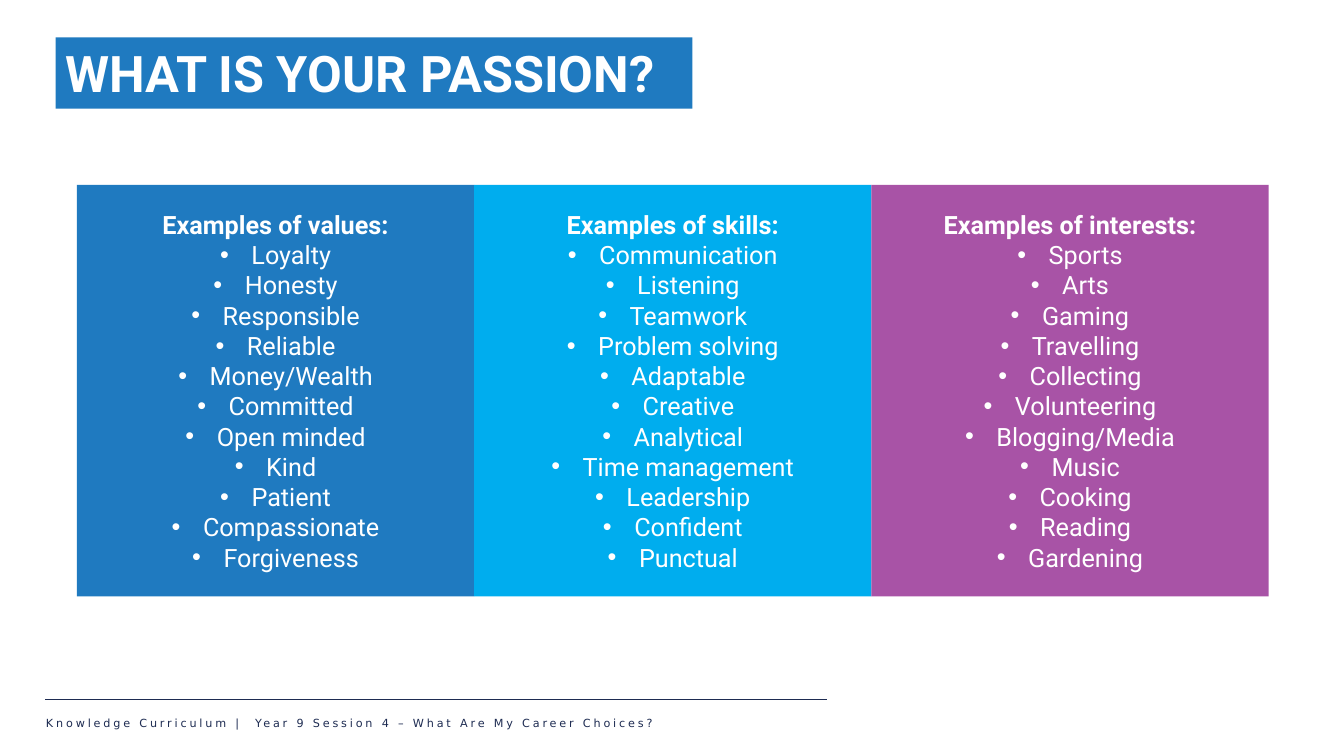
from dataclasses import dataclass

import pptx
import pptx.dml.color
import pptx.enum.shapes
import pptx.enum.text
import pptx.oxml.ns
import pptx.shapes.autoshape
import pptx.slide
import pptx.text.text
import pptx.util
from lxml import etree
from pptx.util import Cm

COLORS = {
    "blue": "1F7AC0",
    "sky": "00ADEE",
    "purple": "A853A6",
    "navy": "1E2C52",
    "white": "FFFFFF",
}
PANEL_LEFT, PANEL_TOP = 1.94, 4.66
PANEL_WIDTH, PANEL_HEIGHT = 10.01, 10.37
BULLET_INDENT = 0.79


@dataclass
class Panel:
    heading: str
    items: list[str]
    color: str


PANELS = [
    Panel("Examples of values:",
          ["Loyalty", "Honesty", "Responsible", "Reliable", "Money/Wealth", "Committed",
           "Open minded", "Kind", "Patient", "Compassionate", "Forgiveness"], "blue"),
    Panel("Examples of skills:",
          ["Communication", "Listening", "Teamwork", "Problem solving", "Adaptable", "Creative",
           "Analytical", "Time management", "Leadership", "Confident", "Punctual"], "sky"),
    Panel("Examples of interests:",
          ["Sports", "Arts", "Gaming", "Travelling", "Collecting", "Volunteering",
           "Blogging/Media", "Music", "Cooking", "Reading", "Gardening"], "purple"),
]


def rgb(color: str) -> pptx.dml.color.RGBColor:
    return pptx.dml.color.RGBColor.from_string(COLORS[color])


def add_run(paragraph: pptx.text.text._Paragraph, text: str, size: float, color: str = "white",
            font: str = "Roboto", bold: bool = False) -> pptx.text.text._Run:
    run = paragraph.add_run()
    run.text = text
    run.font.name = font
    run.font.size = pptx.util.Pt(size)
    run.font.bold = bold
    run.font.color.rgb = rgb(color)
    return run


def add_rectangle(slide: pptx.slide.Slide, left: float, top: float, width: float, height: float,
                  color: str) -> pptx.shapes.autoshape.Shape:
    shape = slide.shapes.add_shape(pptx.enum.shapes.MSO_SHAPE.RECTANGLE,
                                   Cm(left), Cm(top), Cm(width), Cm(height))
    shape.shadow.inherit = False
    shape.fill.solid()
    shape.fill.fore_color.rgb = rgb(color)
    shape.line.fill.background()
    shape.text_frame.word_wrap = True
    return shape


def add_bullet(paragraph: pptx.text.text._Paragraph) -> None:
    properties = paragraph._p.get_or_add_pPr()
    properties.set("marL", str(Cm(BULLET_INDENT)))
    properties.set("indent", str(-Cm(BULLET_INDENT)))
    font = etree.SubElement(properties, pptx.oxml.ns.qn("a:buFont"))
    font.set("typeface", "Arial")
    bullet = etree.SubElement(properties, pptx.oxml.ns.qn("a:buChar"))
    bullet.set("char", "•")


def add_panel(slide: pptx.slide.Slide, panel: Panel, column: int) -> None:
    shape = add_rectangle(slide, PANEL_LEFT + column * PANEL_WIDTH, PANEL_TOP,
                          PANEL_WIDTH, PANEL_HEIGHT, panel.color)
    frame = shape.text_frame
    frame.vertical_anchor = pptx.enum.text.MSO_ANCHOR.MIDDLE
    heading = frame.paragraphs[0]
    heading.alignment = pptx.enum.text.PP_ALIGN.CENTER
    add_run(heading, panel.heading, 18, bold=True)
    for item in panel.items:
        paragraph = frame.add_paragraph()
        paragraph.alignment = pptx.enum.text.PP_ALIGN.CENTER
        add_bullet(paragraph)
        add_run(paragraph, item, 18)


def add_footer(slide: pptx.slide.Slide) -> None:
    rule = slide.shapes.add_connector(pptx.enum.shapes.MSO_CONNECTOR.STRAIGHT,
                                      Cm(1.14), Cm(17.63), Cm(20.85), Cm(17.63))
    rule.line.color.rgb = rgb("navy")
    rule.line.width = pptx.util.Pt(0.5)
    etree.SubElement(rule._element.spPr, pptx.oxml.ns.qn("a:effectLst"))

    box = slide.shapes.add_textbox(Cm(0.91), Cm(17.93), Cm(17.88), Cm(0.61))
    box.text_frame.word_wrap = True
    paragraph = box.text_frame.paragraphs[0]
    # Letter spacing in hundredths of a point; the space after the bar is wider
    for text, spacing in [("Knowledge Curriculum |", 200), (" ", 650),
                          ("Year 9 Session 4 – What Are My Career Choices?", 200)]:
        run = add_run(paragraph, text, 8, "navy", "DejaVu Sans")
        run.font._element.set("spc", str(spacing))


def add_title(slide: pptx.slide.Slide) -> None:
    shape = add_rectangle(slide, 1.4, 0.94, 16.05, 1.8, "blue")
    shape.text_frame.vertical_anchor = pptx.enum.text.MSO_ANCHOR.TOP
    paragraph = shape.text_frame.paragraphs[0]
    paragraph.alignment = pptx.enum.text.PP_ALIGN.LEFT
    add_run(paragraph, "WHAT IS YOUR PASSION?", 36, bold=True)


def main() -> None:
    presentation = pptx.Presentation()
    presentation.slide_width = Cm(33.87)
    presentation.slide_height = Cm(19.05)
    slide = presentation.slides.add_slide(presentation.slide_layouts[6])

    # Footer line and text
    add_footer(slide)

    # Three columns of examples
    for column, panel in enumerate(PANELS):
        add_panel(slide, panel, column)

    # Title banner
    add_title(slide)

    presentation.save("out.pptx")


if __name__ == "__main__":
    main()
